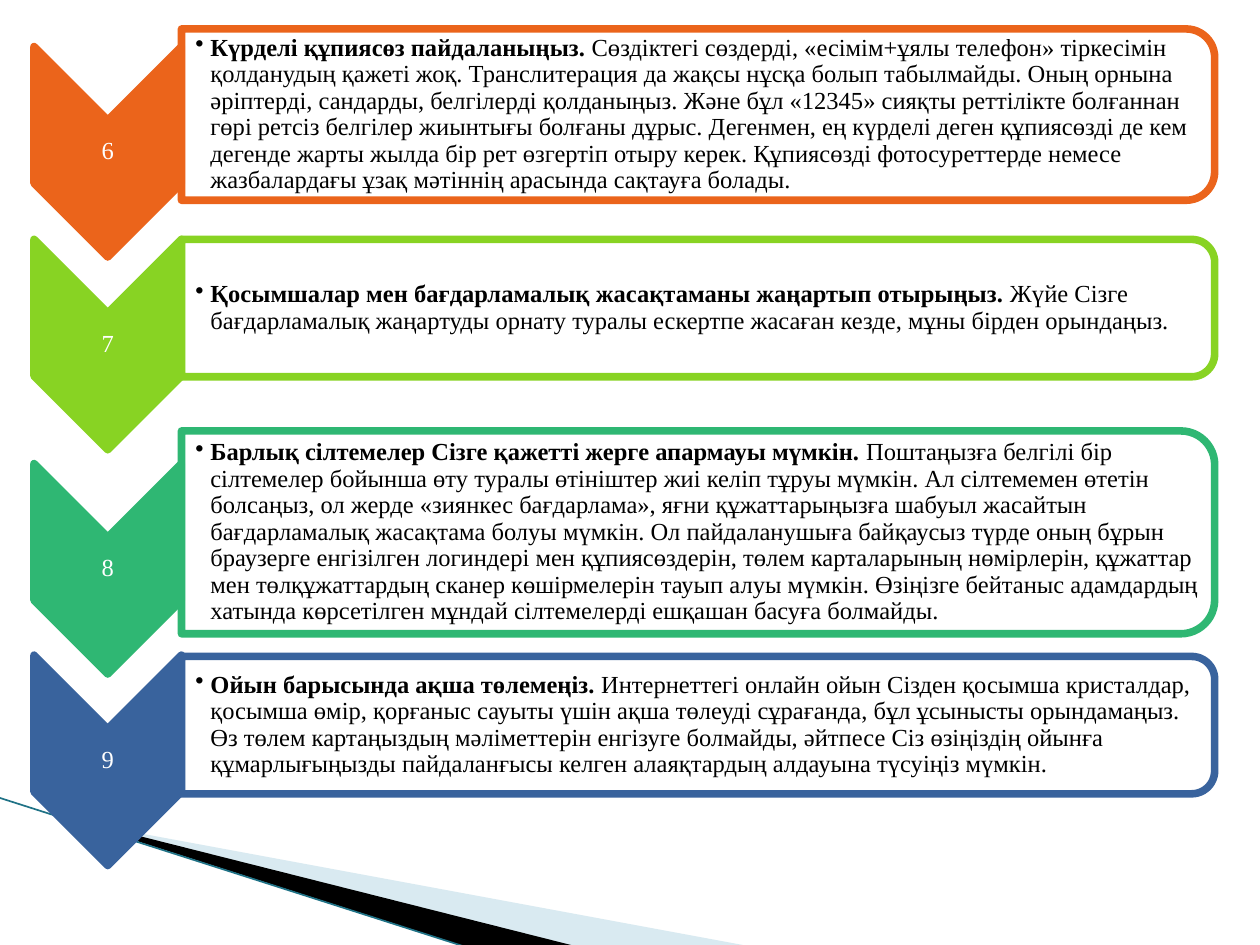
import pptx
import pptx.util
import pptx.dml.color
import pptx.enum.shapes
import pptx.enum.text
import pptx.oxml.ns
from lxml import etree

Inches = pptx.util.Inches
Pt = pptx.util.Pt
MSO_SHAPE = pptx.enum.shapes.MSO_SHAPE
PP_ALIGN = pptx.enum.text.PP_ALIGN
qn = pptx.oxml.ns.qn

FONT = "Times New Roman"
CHEVRON_LEFT, CHEVRON_W, CHEVRON_H = 0.27, 1.17, 1.67
BOX_LEFT, BOX_W = 1.44, 8.2
CORNER_INSET = 0.0488  # share of the box height taken by its rounded corner

# number, colour, chevron top, box top, box height, bold lead, text
TIPS = [
    ("6", "EB641B", 0.37, 0.23, 1.36, "Күрделі құпиясөз пайдаланыңыз. ",
     "Сөздіктегі сөздерді, «есімім+ұялы телефон» тіркесімін қолданудың қажеті жоқ. "
     "Транслитерация да жақсы нұсқа болып табылмайды. Оның орнына әріптерді, сандарды, "
     "белгілерді қолданыңыз. Және бұл «12345» сияқты реттілікте болғаннан гөрі ретсіз "
     "белгілер жиынтығы болғаны дұрыс. Дегенмен, ең күрделі деген құпиясөзді де кем "
     "дегенде жарты жылда бір рет өзгертіп отыру керек. Құпиясөзді фотосуреттерде немесе "
     "жазбалардағы ұзақ мәтіннің арасында сақтауға болады."),
    ("7", "88D323", 1.9, 1.9, 1.09,
     "Қосымшалар мен бағдарламалық жасақтаманы жаңартып отырыңыз.",
     " Жүйе Сізге бағдарламалық жаңартуды орнату туралы ескертпе жасаған кезде, "
     "мұны бірден орындаңыз."),
    ("8", "2FB773", 3.68, 3.42, 1.61,
     "Барлық сілтемелер Сізге қажетті жерге апармауы мүмкін. ",
     "Поштаңызға белгілі бір сілтемелер бойынша өту туралы өтініштер жиі келіп тұруы "
     "мүмкін. Ал сілтемемен өтетін болсаңыз, ол жерде «зиянкес бағдарлама», яғни "
     "құжаттарыңызға шабуыл жасайтын бағдарламалық жасақтама болуы мүмкін. Ол "
     "пайдаланушыға байқаусыз түрде оның бұрын браузерге енгізілген логиндері мен "
     "құпиясөздерін, төлем карталарының нөмірлерін, құжаттар мен төлқұжаттардың сканер "
     "көшірмелерін тауып алуы мүмкін. Өзіңізге бейтаныс адамдардың хатында көрсетілген "
     "мұндай сілтемелерді ешқашан басуға болмайды."),
    ("9", "39639D", 5.2, 5.21, 1.09, "Ойын барысында ақша төлемеңіз. ",
     "Интернеттегі онлайн ойын Сізден қосымша кристалдар, қосымша өмір, қорғаныс сауыты "
     "үшін ақша төлеуді сұрағанда, бұл ұсынысты орындамаңыз. Өз төлем картаңыздың "
     "мәліметтерін енгізуге болмайды, әйтпесе Сіз өзіңіздің ойынға құмарлығыңызды "
     "пайдаланғысы келген алаяқтардың алдауына түсуіңіз мүмкін."),
]


def rgb(color):
    return pptx.dml.color.RGBColor.from_string(color)


def set_fill(s, color, opacity=100):
    s.fill.solid()
    s.fill.fore_color.rgb = rgb(color)
    if opacity < 100:
        clr = s._element.spPr.find(qn("a:solidFill")).find(qn("a:srgbClr"))
        etree.SubElement(clr, qn("a:alpha"), val=str(opacity * 1000))


def set_line(s, color, width):
    s.line.color.rgb = rgb(color)
    s.line.width = Pt(width)


def add_polygon(slide, points, color, opacity=100):
    pts = [(Inches(x), Inches(y)) for x, y in points]
    builder = slide.shapes.build_freeform(*pts[0], scale=1.0)
    builder.add_line_segments(pts[1:], close=True)
    s = builder.convert_to_shape()
    s.shadow.inherit = False
    set_fill(s, color, opacity)
    s.line.fill.background()


def add_backdrop(slide):
    add_polygon(slide, [(0.55, 6.51), (5.95, 7.51), (4.56, 7.51), (0.55, 6.5)], "A0CBDC", 40)
    add_polygon(slide, [(0.53, 6.49), (4.57, 7.51), (3.72, 7.52), (0.54, 6.5)], "000000")
    c = slide.shapes.add_connector(
        pptx.enum.shapes.MSO_CONNECTOR.STRAIGHT,
        Inches(-0.01), Inches(6.33), Inches(3.71), Inches(7.52))
    set_line(c, "1F7286", 0.95)
    etree.SubElement(c._element.spPr, qn("a:effectLst"))


def add_turned(slide, kind, left, top, width, height, color, fill, opacity=100):
    """Add a shape turned by 90 degrees that shows in the given frame."""
    x, y = left + (width - height) / 2, top + (height - width) / 2
    s = slide.shapes.add_shape(kind, Inches(x), Inches(y), Inches(height), Inches(width))
    s.rotation = 90
    s.shadow.inherit = False
    set_fill(s, fill, opacity)
    set_line(s, color, 4.33)


def add_text(slide, left, top, width, height, runs, color, inset=0.01, bullet=False):
    """Add one paragraph of (text, bold) runs."""
    tf = slide.shapes.add_textbox(
        Inches(left), Inches(top), Inches(width), Inches(height)).text_frame
    frame = {"word_wrap": True, "vertical_anchor": pptx.enum.text.MSO_ANCHOR.MIDDLE,
             "margin_left": Inches(inset), "margin_right": Inches(0.01),
             "margin_top": Inches(0.01), "margin_bottom": Inches(0.01)}
    for name, value in frame.items():
        setattr(tf, name, value)
    p = tf.paragraphs[0]
    p.line_spacing = 0.9
    if bullet:
        p.level = 1
        p.alignment = PP_ALIGN.LEFT
        pPr = p._p.get_or_add_pPr()
        pPr.set("marL", str(Inches(0.12)))
        pPr.set("indent", str(Inches(-0.12)))
        etree.SubElement(pPr, qn("a:buChar"), char="•")
    else:
        p.alignment = PP_ALIGN.CENTER
    for text, bold in runs:
        r = p.add_run()
        r.text = text
        for name, value in {"name": FONT, "size": Pt(14), "bold": bold}.items():
            setattr(r.font, name, value)
        r.font.color.rgb = rgb(color)


def add_tip(slide, number, color, chevron_top, box_top, box_h, lead, text):
    add_turned(slide, MSO_SHAPE.CHEVRON, CHEVRON_LEFT, chevron_top,
               CHEVRON_W, CHEVRON_H, color, color)
    add_text(slide, CHEVRON_LEFT, chevron_top + CHEVRON_W / 2, CHEVRON_W,
             CHEVRON_H - CHEVRON_W, [(number, False)], "FFFFFF")
    add_turned(slide, MSO_SHAPE.ROUND_2_SAME_RECTANGLE, BOX_LEFT, box_top,
               BOX_W, box_h, color, "FFFFFF", 90)
    inset = box_h * CORNER_INSET
    add_text(slide, BOX_LEFT, box_top + inset, BOX_W - inset, box_h - 2 * inset,
             [(lead, True), (text, False)], "000000", 0.11, True)


def main():
    prs = pptx.Presentation()
    prs.slide_width, prs.slide_height = Inches(10), Inches(7.5)
    slide = prs.slides.add_slide(prs.slide_layouts[6])
    add_backdrop(slide)
    for tip in TIPS:
        add_tip(slide, *tip)
    prs.save("out.pptx")


if __name__ == "__main__":
    main()
